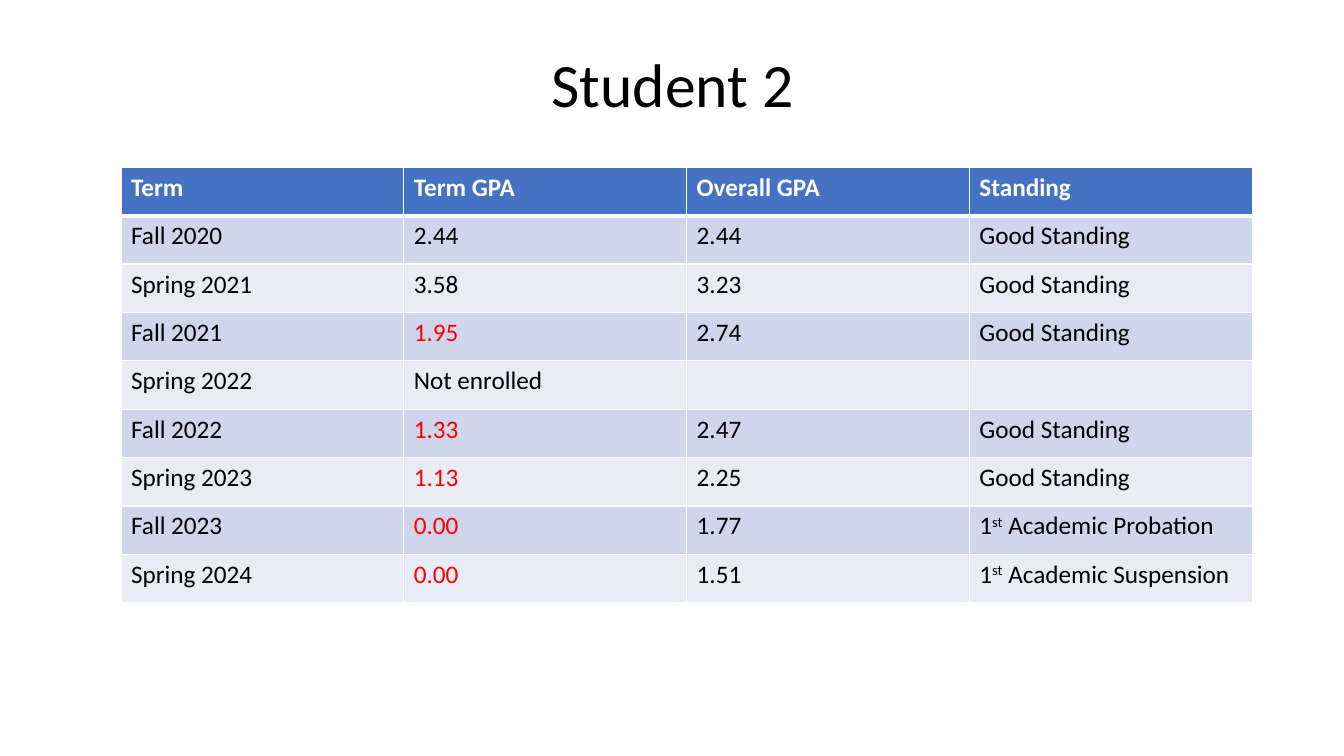
"""Build a slide with one student's GPA and academic standing by term."""
from dataclasses import dataclass

from lxml import etree
from pptx import Presentation
from pptx.dml.color import RGBColor
from pptx.enum.text import MSO_ANCHOR, PP_ALIGN
from pptx.oxml.ns import qn
from pptx.util import Inches, Pt

CENTER = PP_ALIGN.CENTER
MIDDLE = MSO_ANCHOR.MIDDLE

TITLE = "Student 2"
HEADER = ("Term", "Term GPA", "Overall GPA", "Standing")
TERMS = [
    ("Fall 2020", "2.44", "2.44", "Good Standing"),
    ("Spring 2021", "3.58", "3.23", "Good Standing"),
    ("Fall 2021", "1.95", "2.74", "Good Standing"),
    ("Spring 2022", "Not enrolled", "", ""),
    ("Fall 2022", "1.33", "2.47", "Good Standing"),
    ("Spring 2023", "1.13", "2.25", "Good Standing"),
    ("Fall 2023", "0.00", "1.77", "1^st^ Academic Probation"),
    ("Spring 2024", "0.00", "1.51", "1^st^ Academic Suspension"),
]
TERM_GPA_COL = 1
PASSING_GPA = "2.00"

SLIDE_W, SLIDE_H = 13.33, 7.5
TITLE_BOX = (0.92, 0.14, 11.5, 1.45)
TABLE_LEFT, TABLE_TOP = 1.2, 1.66
COL_W, ROW_H = 2.805, 0.48


@dataclass(frozen=True)
class Theme:
    font: str = "Calibri"
    title_size: int = 44
    cell_size: int = 18
    text: str = "000000"
    header_text: str = "FFFFFF"
    low_gpa: str = "FF0000"
    header_fill: str = "4472C4"
    bands: tuple = ("CFD5EA", "E9EBF5")
    border: str = "FFFFFF"
    thin: int = 1
    thick: int = 3


THEME = Theme()


def set_font(p, size, color, bold=False):
    p.font.name = THEME.font
    p.font.size = Pt(size)
    p.font.bold = bold
    p.font.color.rgb = RGBColor.from_string(color)


def add_marked_runs(p, text):
    for i, part in enumerate(text.split("^")):
        if part:
            r = p.add_run()
            r.text = part
            if i % 2:
                r._r.get_or_add_rPr().set("baseline", "30000")


def set_borders(cell, row):
    tcPr = cell._tc.get_or_add_tcPr()
    thick_side = {0: "lnB", 1: "lnT"}.get(row)
    for i, side in enumerate(("lnL", "lnR", "lnT", "lnB")):
        width = THEME.thick if side == thick_side else THEME.thin
        ln = etree.Element(qn(f"a:{side}"), w=str(Pt(width)))
        fill = etree.SubElement(ln, qn("a:solidFill"))
        etree.SubElement(fill, qn("a:srgbClr"), val=THEME.border)
        tcPr.insert(i, ln)


def cell_style(row, col, text):
    if row == 0:
        return THEME.header_fill, THEME.header_text
    low = col == TERM_GPA_COL and text < PASSING_GPA
    return THEME.bands[(row - 1) % 2], THEME.low_gpa if low else THEME.text


def add_title(slide):
    s = slide.shapes.title
    s.left, s.top, s.width, s.height = map(Inches, TITLE_BOX)
    tf = s.text_frame
    tf.text = TITLE
    tf.vertical_anchor = MIDDLE
    p = tf.paragraphs[0]
    p.alignment = CENTER
    p.line_spacing = 0.9
    set_font(p, THEME.title_size, THEME.text)


def add_gpa_table(slide):
    rows = [HEADER, *TERMS]
    n_rows, n_cols = len(rows), len(HEADER)
    table = slide.shapes.add_table(
        n_rows, n_cols, Inches(TABLE_LEFT), Inches(TABLE_TOP),
        Inches(n_cols * COL_W), Inches(n_rows * ROW_H)).table
    for row, values in enumerate(rows):
        for col, text in enumerate(values):
            cell = table.cell(row, col)
            fill, color = cell_style(row, col, text)
            cell.fill.solid()
            cell.fill.fore_color.rgb = RGBColor.from_string(fill)
            set_borders(cell, row)
            p = cell.text_frame.paragraphs[0]
            add_marked_runs(p, text)
            set_font(p, THEME.cell_size, color, bold=row == 0)


def main():
    prs = Presentation()
    prs.slide_width, prs.slide_height = Inches(SLIDE_W), Inches(SLIDE_H)
    slide = prs.slides.add_slide(prs.slide_layouts.get_by_name("Title Only"))
    add_title(slide)
    add_gpa_table(slide)
    prs.save("out.pptx")


if __name__ == "__main__":
    main()
